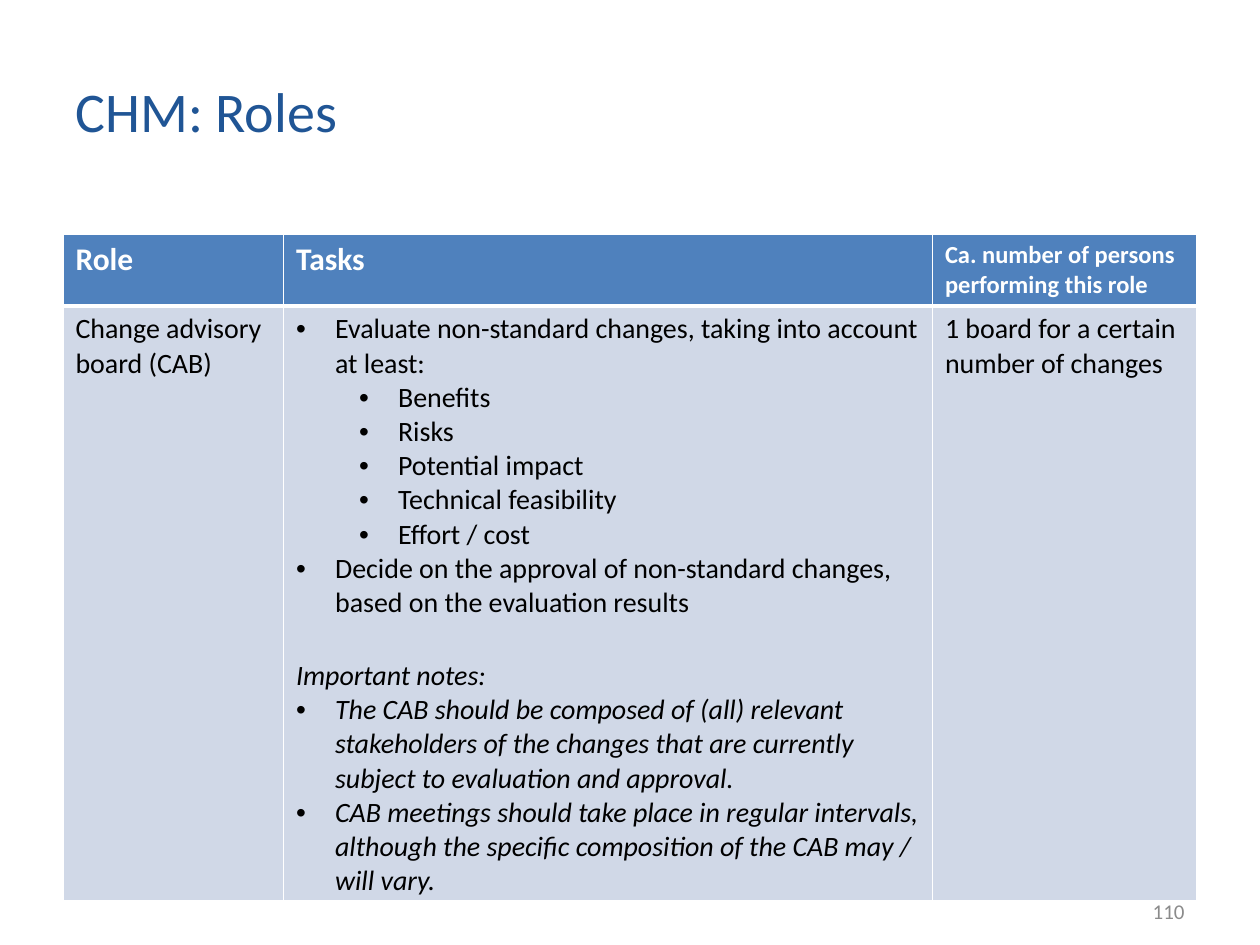
from lxml import etree
from pptx import Presentation
from pptx.dml.color import RGBColor
from pptx.enum.text import MSO_ANCHOR, PP_ALIGN
from pptx.oxml.ns import qn
from pptx.util import Inches, Pt

LEFT, RIGHT, MIDDLE = PP_ALIGN.LEFT, PP_ALIGN.RIGHT, MSO_ANCHOR.MIDDLE
COLORS = {"title": "205595", "header": "4F81BD", "body": "D0D8E7",
          "white": "FFFFFF", "black": "000000", "number": "8B8B8B"}
HEADER = {"size": Pt(18), "bold": True}
SMALL_HEADER = {"size": Pt(14), "bold": True}
BODY = {"size": Pt(16), "bold": False}
NOTE = {**BODY, "italic": True}

prs = Presentation()
prs.slide_width, prs.slide_height = Inches(10), Inches(7.5)
s = prs.slides.add_slide(prs.slide_layouts[6])
W, H = prs.slide_width, prs.slide_height
margin = int(W * 0.05)


def write(p, text, color, formats):
    r = p.add_run()
    r.text = text
    r.font.name = "Calibri"
    r.font.color.rgb = RGBColor.from_string(COLORS[color])
    for name, value in formats.items():
        setattr(r.font, name, value)


def border(cell, side, width):
    ln = etree.SubElement(cell._tc.get_or_add_tcPr(), qn("a:ln" + side), w=str(Pt(width)))
    fill = etree.SubElement(ln, qn("a:solidFill"))
    etree.SubElement(fill, qn("a:srgbClr"), val=COLORS["white"])


labels = [
    ("CHM: Roles", margin, Inches(0.3), Inches(8.04), Inches(1.15), LEFT, "title", 32),
    ("110", W - margin - Inches(2.33), Inches(7.03), Inches(2.33), Inches(0.4), RIGHT, "number", 12),
]
for text, x, y, w, h, align, color, size in labels:
    tf = s.shapes.add_textbox(x, y, w, h).text_frame
    tf.word_wrap = True
    tf.vertical_anchor = MIDDLE
    tf.paragraphs[0].alignment = align
    write(tf.paragraphs[0], text, color, {"size": Pt(size)})

tasks = [
    (0, "Evaluate non-standard changes, taking into account at least:", BODY),
    (1, "Benefits", BODY),
    (1, "Risks", BODY),
    (1, "Potential impact", BODY),
    (1, "Technical feasibility", BODY),
    (1, "Effort / cost", BODY),
    (0, "Decide on the approval of non-standard changes, based on the evaluation results", BODY),
    (None, "Important notes:", NOTE),
    (0, "The CAB should be composed of (all) relevant stakeholders of the changes "
        "that are currently subject to evaluation and approval.", NOTE),
    (0, "CAB meetings should take place in regular intervals, although the specific "
        "composition of the CAB may / will vary.", NOTE),
]
rows = [
    [[(None, "Role", HEADER)], [(None, "Tasks", HEADER)],
     [(None, "Ca. number of persons performing this role", SMALL_HEADER)]],
    [[(None, "Change advisory board (CAB)", BODY)], tasks,
     [(None, "1 board for a certain number of changes", BODY)]],
]
col_widths, row_heights = [1.75, 5.15, 2.1], [0.56, 4.72]
row_styles = [("header", "white", {"L": 0.96, "R": 0.96, "T": 0.96, "B": 3}),
              ("body", "black", {"L": 0.96, "R": 0.96, "T": 3, "B": 0.96})]

table = s.shapes.add_table(len(rows), len(col_widths), margin, Inches(1.86),
                           W - 2 * margin, Inches(sum(row_heights))).table
for column, width in zip(table.columns, col_widths):
    column.width = Inches(width)
for row, height, cells, (fill, color, edges) in zip(table.rows, row_heights, rows, row_styles):
    row.height = Inches(height)
    for cell, paragraphs in zip(row.cells, cells):
        for side, width in edges.items():
            border(cell, side, width)
        cell.fill.solid()
        cell.fill.fore_color.rgb = RGBColor.from_string(COLORS[fill])
        tf = cell.text_frame
        for i, (level, text, formats) in enumerate(paragraphs):
            p = tf.add_paragraph() if i else tf.paragraphs[0]
            if level is not None:
                p.level = level
                pPr = p._p.get_or_add_pPr()
                pPr.set("marL", str(Inches(0.31 + 0.5 * level)))
                pPr.set("indent", str(-Inches(0.31)))
                bullet_color = etree.SubElement(pPr, qn("a:buClr"))
                etree.SubElement(bullet_color, qn("a:srgbClr"), val=COLORS["black"])
                etree.SubElement(pPr, qn("a:buFont"), typeface="Arial")
                etree.SubElement(pPr, qn("a:buChar"), char="•")
            elif i:
                p.space_before = Pt(22)
            write(p, text, color, formats)

prs.save("out.pptx")
